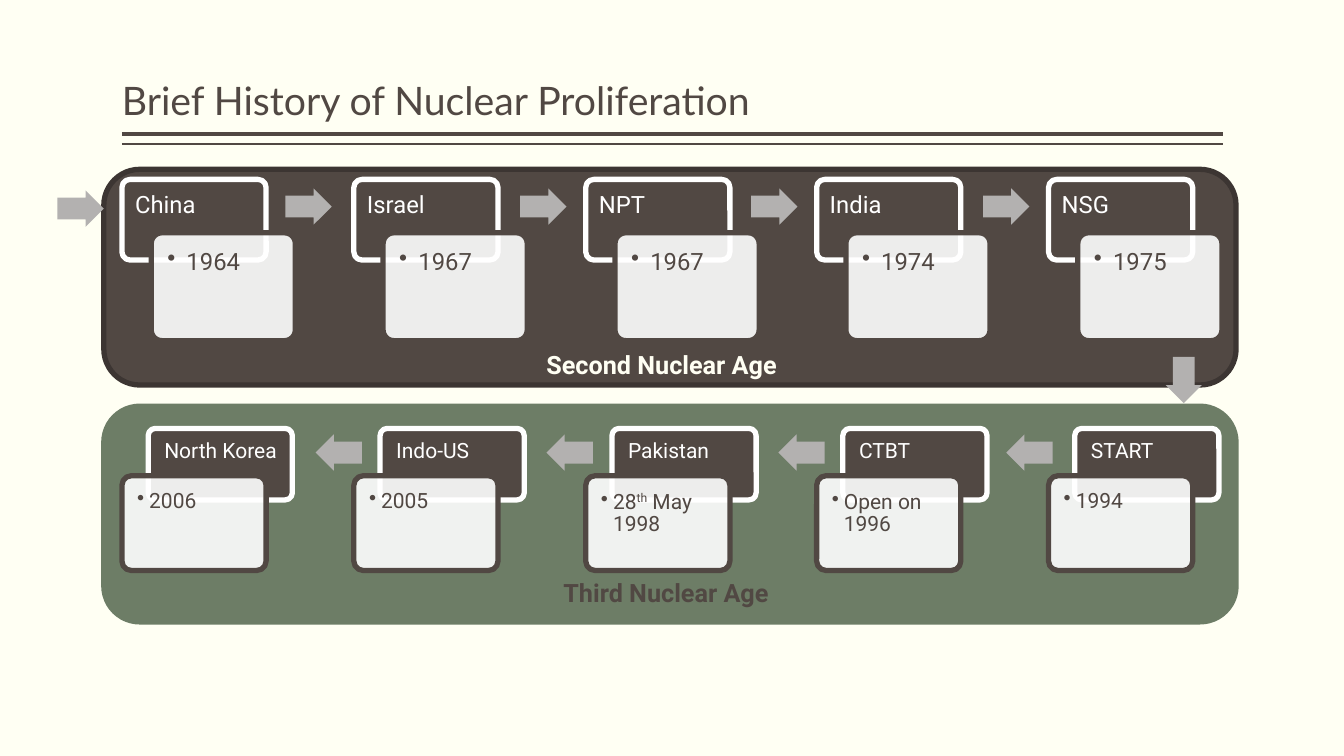
from lxml.etree import SubElement
from pptx import Presentation
from pptx.dml.color import RGBColor
from pptx.enum.shapes import MSO_CONNECTOR, MSO_SHAPE
from pptx.enum.text import MSO_ANCHOR, MSO_AUTO_SIZE, PP_ALIGN
from pptx.oxml.ns import qn
from pptx.util import Pt

PX = 9144  # EMU, 100 px to the inch
COLORS = {"paper": "FFFFF3", "brown": "514843", "dark": "3C3532",
          "green": "6D7D66", "grey": "B3B1B0", "white": "FFFFFF"}
EDGE = 3.78
CARD_W, CARD_LEFT, CARD_STEP = 143, 121, 229.75

# Runs marked True are superscript.
ROWS = [
    {"cards": [("China", [("1964", False)]), ("Israel", [("1967", False)]),
               ("NPT", [("1967", False)]), ("India", [("1974", False)]),
               ("NSG", [("1975", False)])],
     "size": 17, "inset": 13, "indent": 19, "head_dx": 0, "label_dx": 0,
     "body_dx": 29, "head_y": 178, "head_h": 80, "label_h": 54,
     "body_y": 231, "body_h": 107, "pad": (3, 4),
     "arrows": [283, 516, 745, 975], "arrow_y": 187, "turn": 0},
    {"cards": [("North Korea", [("2006", False)]), ("Indo-US", [("2005", False)]),
               ("Pakistan", [("28", False), ("th", True), (" May 1998", False)]),
               ("CTBT", [("Open on 1996", False)]), ("START", [("1994", False)])],
     "size": 15, "inset": 12, "indent": 12, "head_dx": 26, "label_dx": 30,
     "body_dx": 0, "head_y": 425, "head_h": 71, "label_h": 47,
     "body_y": 472, "body_h": 94, "pad": (3, 3),
     "arrows": [313, 542, 772, 998], "arrow_y": 431, "turn": 180},
]


def rgb(name):
    return RGBColor.from_string(COLORS[name])


def apply(target, values):
    for name, value in values.items():
        setattr(target, name, value)


class Deck:
    def __init__(self, width, height):
        self.prs = Presentation()
        apply(self.prs, {"slide_width": width * PX, "slide_height": height * PX})
        self.s = self.prs.slides.add_slide(self.prs.slide_layouts[5])
        self.s.background.fill.solid()
        self.s.background.fill.fore_color.rgb = rgb("paper")

    def add_runs(self, tf, runs, size, color, font="Roboto", bold=False):
        p = tf.paragraphs[0]
        for text, raised in runs:
            r = p.add_run()
            r.text = text
            apply(r.font, {"name": font, "size": Pt(size), "bold": bold})
            r.font.color.rgb = rgb(color)
            if raised:
                r._r.get_or_add_rPr().set("baseline", "30000")
        return p

    def title(self, box, text):
        sp = self.s.shapes.title
        apply(sp, dict(zip(("left", "top", "width", "height"), (v * PX for v in box))))
        apply(sp.text_frame, {"margin_left": 0, "margin_right": 0, "word_wrap": True,
                              "vertical_anchor": MSO_ANCHOR.BOTTOM,
                              "auto_size": MSO_AUTO_SIZE.NONE})
        p = self.add_runs(sp.text_frame, [(text, False)], 28, "brown", "Lato")
        apply(p, {"alignment": PP_ALIGN.LEFT, "line_spacing": 0.9})

    def rule(self, x1, x2, y, weight):
        c = self.s.shapes.add_connector(MSO_CONNECTOR.STRAIGHT,
                                        x1 * PX, y * PX, x2 * PX, y * PX)
        c.line.color.rgb = rgb("brown")
        c.line.width = Pt(weight)
        SubElement(c._element.spPr, qn("a:effectLst"))

    def shape(self, kind, box, fill, line=None, adjust=(), alpha=None):
        sp = self.s.shapes.add_shape(kind, *(v * PX for v in box))
        sp.shadow.inherit = False
        for i, value in enumerate(adjust):
            sp.adjustments[i] = value
        sp.fill.solid()
        sp.fill.fore_color.rgb = rgb(fill)
        if alpha:
            color = sp._element.spPr.find(qn("a:solidFill"))[0]
            SubElement(color, qn("a:alpha")).set("val", str(alpha * 1000))
        if line:
            sp.line.color.rgb = rgb(line)
            sp.line.width = Pt(EDGE)
        else:
            sp.line.fill.background()
        return sp

    def arrow(self, x, y, turn=0):
        sp = self.shape(MSO_SHAPE.RIGHT_ARROW, (x, y, 46, 36), "grey", adjust=(0.6, 0.5))
        sp.rotation = turn

    def text(self, box, runs, size, color, insets=(10, 5, 10, 5), bold=False,
             wrap=True, spacing=None, indent=0):
        """Add a text box; an indent above zero gives a hanging bullet."""
        tf = self.s.shapes.add_textbox(*(v * PX for v in box)).text_frame
        sides = ("margin_left", "margin_top", "margin_right", "margin_bottom")
        apply(tf, dict(zip(sides, (v * PX for v in insets))))
        tf.word_wrap = wrap
        p = self.add_runs(tf, runs, size, color, bold=bold)
        p.line_spacing = spacing
        if indent:
            pPr = p._p.get_or_add_pPr()
            pPr.set("marL", str(indent * PX))
            pPr.set("indent", str(-indent * PX))
            SubElement(pPr, qn("a:buChar")).set("char", "•")

    def card(self, x, name, date, row):
        inset, size = row["inset"], row["size"]
        self.shape(MSO_SHAPE.ROUNDED_RECTANGLE,
                   (x + row["head_dx"], row["head_y"], CARD_W, row["head_h"]),
                   "brown", "white", (0.1,))
        self.text((x + row["label_dx"], row["head_y"], CARD_W, row["label_h"]),
                  [(name, False)], size, "white",
                  (inset, inset, inset, inset // 2), spacing=0.9)
        left, top, height = x + row["body_dx"], row["body_y"], row["body_h"]
        self.shape(MSO_SHAPE.ROUNDED_RECTANGLE, (left, top, CARD_W, height),
                   "white", "brown", (0.1,), alpha=90)
        dx, dy = row["pad"]
        self.text((left + dx, top + dy, CARD_W - 2 * dx, height - 2 * dy), date,
                  size, "brown", (inset,) * 4, spacing=0.9, indent=row["indent"])


def main():
    deck = Deck(1333, 750)
    deck.rule(121, 1213, 133, 3)
    deck.rule(121, 1213, 143, 1)
    deck.title((121, 8, 1092, 120), "Brief History of Nuclear Proliferation")

    for top, fill, line in ((403, "green", "green"), (168, "brown", "dark")):
        deck.shape(MSO_SHAPE.ROUNDED_RECTANGLE, (103, top, 1123, 214), fill, line)
    deck.arrow(1151, 359, 90)

    for row in ROWS:
        for i, (name, date) in enumerate(row["cards"]):
            deck.card(CARD_LEFT + round(i * CARD_STEP), name, date, row)
        for x in row["arrows"]:
            deck.arrow(x, row["arrow_y"], row["turn"])

    deck.arrow(57, 189)
    deck.text((532, 342, 265, 40), [("Second Nuclear Age", False)], 18, "paper",
              bold=True, wrap=False)
    deck.text((549, 568, 236, 40), [("Third Nuclear Age", False)], 18, "brown", bold=True)
    deck.prs.save("out.pptx")


if __name__ == "__main__":
    main()
